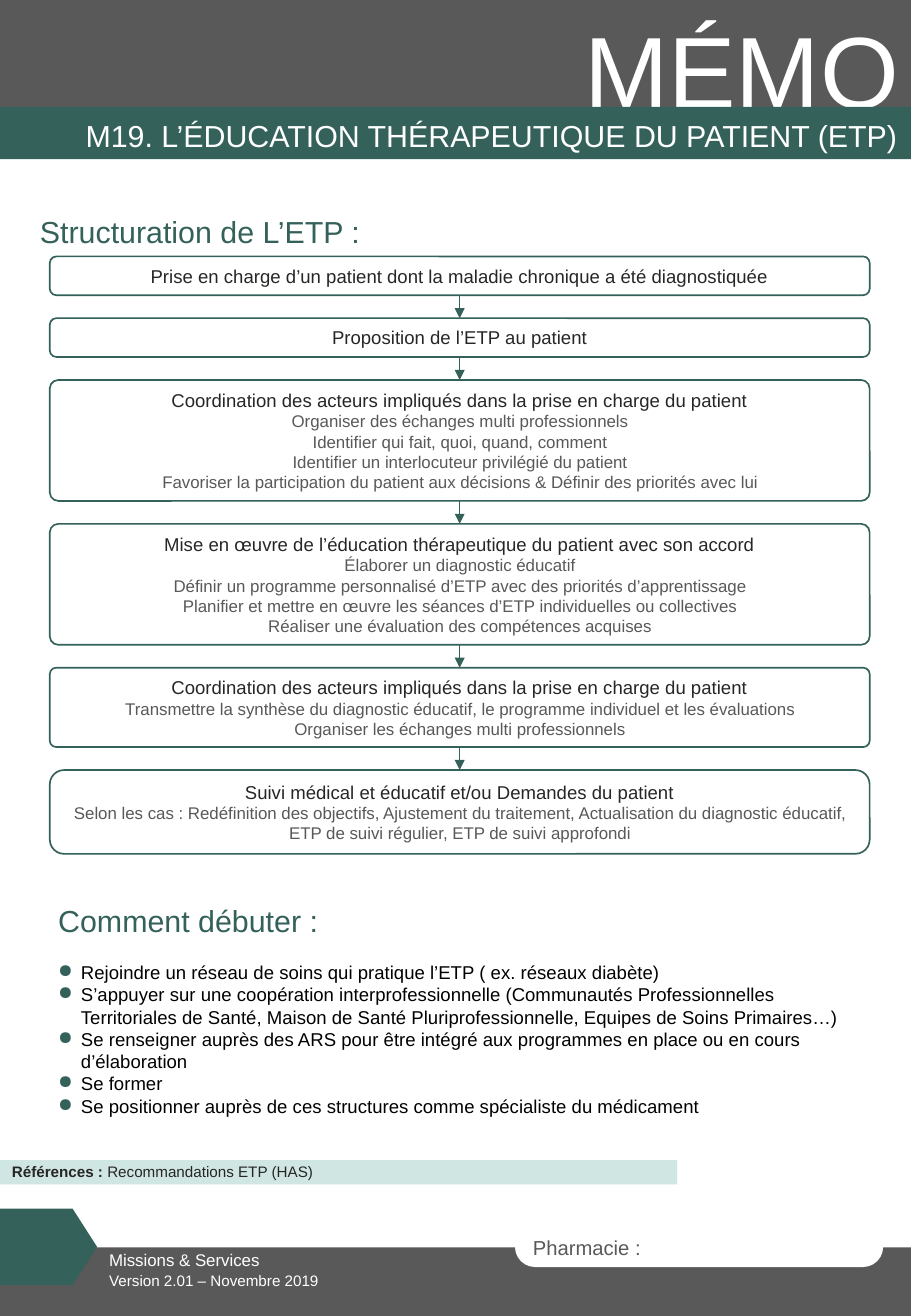
import pptx
import pptx.util
import pptx.dml.color
import pptx.enum.shapes
import pptx.enum.text
import pptx.oxml.ns
import lxml.etree

Pt = pptx.util.Pt
RGBColor = pptx.dml.color.RGBColor
SHAPE = pptx.enum.shapes.MSO_SHAPE
ALIGN = pptx.enum.text.PP_ALIGN
ANCHOR = pptx.enum.text.MSO_ANCHOR
qn = pptx.oxml.ns.qn

GREEN = RGBColor(0x34, 0x61, 0x5A)
PALE_GREEN = RGBColor(0xD0, 0xE6, 0xE2)
GREY = RGBColor(0x59, 0x59, 0x59)
DARK = RGBColor(0x26, 0x26, 0x26)
BLACK = RGBColor(0, 0, 0)
WHITE = RGBColor(0xFF, 0xFF, 0xFF)

deck = pptx.Presentation()
deck.slide_width, deck.slide_height = Pt(540), Pt(780)
page = deck.slides.add_slide(deck.slide_layouts[5])


def add_panel(kind, left, top, width, height, fill, outline=None, corner=None):
    panel = page.shapes.add_shape(kind, Pt(left), Pt(top), Pt(width), Pt(height))
    panel.shadow.inherit = False
    panel.fill.solid()
    panel.fill.fore_color.rgb = fill
    if outline is None:
        panel.line.fill.background()
    else:
        panel.line.color.rgb = outline
        panel.line.width = Pt(1)
    if corner is not None:
        panel.adjustments[0] = corner
    return panel


def write(box, lines, **layout):
    """Each line is (text, size, colour) or (text, size, colour, bold, same paragraph)."""
    frame = box.text_frame
    para = None
    for text, size, color, *extra in lines:
        bold, same_para = extra or (False, False)
        if para is None:
            para = frame.paragraphs[0]
        elif not same_para:
            para = frame.add_paragraph()
        settings = {"alignment": ALIGN.LEFT} | layout
        for name, value in settings.items():
            setattr(para, name, value)
        span = para.add_run()
        span.text = text
        font_values = {"name": "Arial", "size": Pt(size), "bold": bold}
        for name, value in font_values.items():
            setattr(span.font, name, value)
        span.font.color.rgb = color


# Header bands; the green one covers the foot of the big word
add_panel(SHAPE.RECTANGLE, 0, 0, 540, 63.4, GREY)
memo = page.shapes.add_textbox(Pt(333.4), Pt(0.7), Pt(206.6), Pt(80))
memo.text_frame.word_wrap = False
write(memo, [("MÉMO", 60, WHITE)], alignment=ALIGN.RIGHT)
add_panel(SHAPE.RECTANGLE, 0, 63.4, 540, 31, GREEN)

# Title, brought in front of its band
title = page.shapes.title
title_place = {"left": Pt(16.6), "top": Pt(68.4), "width": Pt(522.7), "height": Pt(26.6)}
for name, value in title_place.items():
    setattr(title, name, value)
title.text_frame.auto_size = pptx.enum.text.MSO_AUTO_SIZE.NONE
title.text_frame.vertical_anchor = ANCHOR.MIDDLE
write(title, [("M19. L’ÉDUCATION THÉRAPEUTIQUE DU PATIENT (ETP)", 18, WHITE)],
      alignment=ALIGN.RIGHT, line_spacing=0.9)
title.element.getparent().append(title.element)

# Footer
add_panel(SHAPE.RECTANGLE, 0, 739.4, 540, 40.6, GREY)
pharmacy = add_panel(SHAPE.ROUNDED_RECTANGLE, 305.3, 727.2, 218.2, 23.8, WHITE, corner=0.5)
write(pharmacy, [("Pharmacie :", 12, GREY)])
add_panel(SHAPE.PENTAGON, 0, 716.4, 57.6, 45.4, GREEN, corner=0.32)

# Plain text boxes: left, top, width, height, line
labels = [
    (57.6, 737.3, 138, 19.4, ("Missions & Services", 10, WHITE)),
    (57.6, 750.2, 423, 18, ("Version 2.01 – Novembre 2019", 9, WHITE)),
    (16.6, 122.8, 469, 29, ("Structuration de L’ETP :", 18, GREEN)),
]
for left, top, width, height, line in labels:
    label = page.shapes.add_textbox(Pt(left), Pt(top), Pt(width), Pt(height))
    label.text_frame.word_wrap = True
    write(label, [line])

# Flow chart: height, corner, heading, details
stages = [
    (23, 0.17, "Prise en charge d’un patient dont la maladie chronique a été diagnostiquée", []),
    (23, 0.17, "Proposition de l’ETP au patient", []),
    (71.7, 0.07, "Coordination des acteurs impliqués dans la prise en charge du patient", [
        "Organiser des échanges multi professionnels",
        "Identifier qui fait, quoi, quand, comment",
        "Identifier un interlocuteur privilégié du patient",
        "Favoriser la participation du patient aux décisions & Définir des priorités avec lui"]),
    (71.7, 0.07, "Mise en œuvre de l’éducation thérapeutique du patient avec son accord", [
        "Élaborer un diagnostic éducatif",
        "Définir un programme personnalisé d’ETP avec des priorités d’apprentissage",
        "Planifier et mettre en œuvre les séances d’ETP individuelles ou collectives",
        "Réaliser une évaluation des compétences acquises"]),
    (47, 0.08, "Coordination des acteurs impliqués dans la prise en charge du patient", [
        "Transmettre la synthèse du diagnostic éducatif, le programme individuel et les évaluations",
        "Organiser les échanges multi professionnels"]),
    (49.7, 0.17, "Suivi médical et éducatif et/ou Demandes du patient", [
        "Selon les cas : Redéfinition des objectifs, Ajustement du traitement, Actualisation du "
        "diagnostic éducatif, ETP de suivi régulier, ETP de suivi approfondi"]),
]
STAGE_GAP = 13.6
stage_top = 152
previous = None
for height, corner, heading, details in stages:
    stage = add_panel(SHAPE.ROUNDED_RECTANGLE, 29.5, stage_top, 486, height, WHITE, GREEN, corner)
    write(stage, [(heading, 11, DARK)] + [(detail, 10, GREY) for detail in details],
          alignment=ALIGN.CENTER)
    if previous is not None:
        arrow = page.shapes.add_connector(pptx.enum.shapes.MSO_CONNECTOR.STRAIGHT, 0, 0, 0, 0)
        arrow.begin_connect(previous, 2)
        arrow.end_connect(stage, 0)
        arrow.line.color.rgb = GREEN
        arrow.line.width = Pt(0.5)
        line_xml = arrow.line.fill and arrow.element.spPr.find(qn("a:ln"))
        lxml.etree.SubElement(line_xml, qn("a:tailEnd"), type="triangle")
        lxml.etree.SubElement(arrow.element.spPr, qn("a:effectLst"))
    previous = stage
    stage_top += height + STAGE_GAP

# How to start
advice = [
    "Rejoindre un réseau de soins qui pratique l’ETP ( ex. réseaux diabète)",
    "S’appuyer sur une coopération interprofessionnelle (Communautés Professionnelles "
    "Territoriales de Santé, Maison de Santé Pluriprofessionnelle, Equipes de Soins Primaires…)",
    "Se renseigner auprès des ARS pour être intégré aux programmes en place ou en cours "
    "d’élaboration",
    "Se former",
    "Se positionner auprès de ces structures comme spécialiste du médicament",
]
start = page.shapes.add_textbox(Pt(27.4), Pt(531.4), Pt(491), Pt(135.4))
start.text_frame.word_wrap = True
write(start, [("Comment débuter :", 18, GREEN)] + [(item, 11, BLACK) for item in advice])
bullets = start.text_frame.paragraphs[1:]
for para in bullets:
    props = para._p.get_or_add_pPr()
    props.set("marL", str(Pt(13.5)))
    props.set("indent", str(-Pt(13.5)))
    bullet_color = lxml.etree.SubElement(props, qn("a:buClr"))
    lxml.etree.SubElement(bullet_color, qn("a:srgbClr"), val=str(GREEN))
    lxml.etree.SubElement(props, qn("a:buChar"), char="●")
bullets[0].space_before = Pt(13)

# References
references = add_panel(SHAPE.RECTANGLE, 0, 687.6, 401.5, 14.4, PALE_GREEN)
write(references, [("Références : ", 9, DARK, True, False),
                   ("Recommandations ETP (HAS)", 9, DARK, False, True)], line_spacing=0.9)

deck.save("out.pptx")
